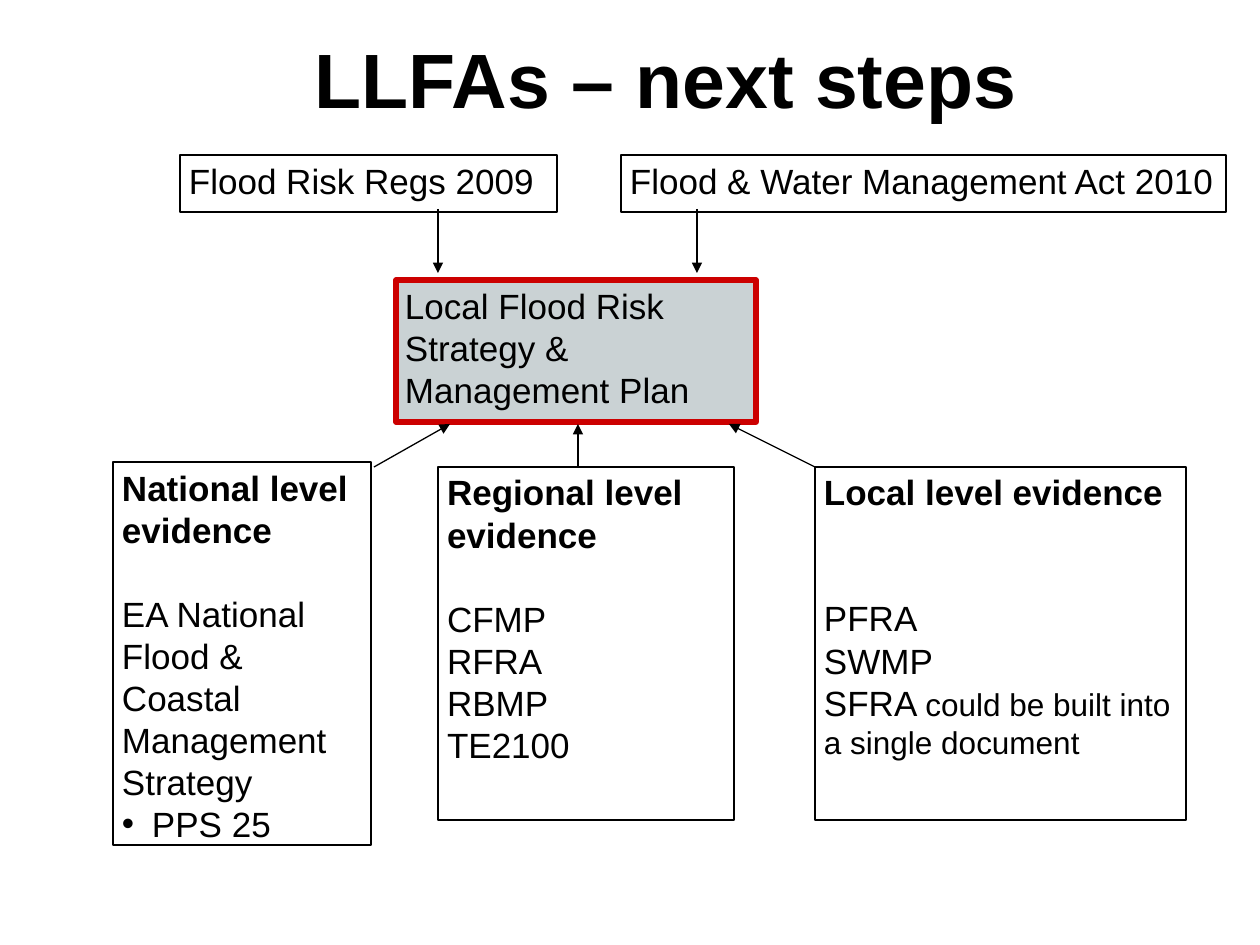
import pptx
import pptx.dml.color
import pptx.enum.shapes
import pptx.enum.text
import pptx.oxml.ns
import pptx.util
from lxml import etree

PX = 914400 / 126
BLACK = pptx.dml.color.RGBColor(0x00, 0x00, 0x00)
GREY = pptx.dml.color.RGBColor(0xCA, 0xD2, 0xD4)
RED = pptx.dml.color.RGBColor(0xCC, 0x00, 0x00)
WHITE = pptx.dml.color.RGBColor(0xFF, 0xFF, 0xFF)
qn = pptx.oxml.ns.qn


def px(length):
    return pptx.util.Emu(round(length * PX))


def add_box(page, place, paragraphs, size=20, fill=None, line=BLACK, weight=0.75, inset=(9, 4)):
    """Each paragraph is (text, bold, space before in points, bulleted)."""
    box = page.shapes.add_shape(
        pptx.enum.shapes.MSO_SHAPE.RECTANGLE, *[px(value) for value in place])
    box.shadow.inherit = False
    if fill is None:
        box.fill.background()
    else:
        box.fill.solid()
        box.fill.fore_color.rgb = fill
    if line is None:
        box.line.fill.background()
    else:
        box.line.color.rgb = line
        box.line.width = pptx.util.Pt(weight)
    frame = box.text_frame
    frame.word_wrap = True
    frame.vertical_anchor = pptx.enum.text.MSO_ANCHOR.TOP
    frame.margin_left = frame.margin_right = px(inset[0])
    frame.margin_top = frame.margin_bottom = px(inset[1])
    for index, (text, bold, gap, bulleted) in enumerate(paragraphs):
        para = frame.add_paragraph() if index else frame.paragraphs[0]
        para.text = text
        para.alignment = pptx.enum.text.PP_ALIGN.LEFT
        if gap:
            para.space_before = pptx.util.Pt(gap)
        if bulleted:
            properties = para._p.get_or_add_pPr()
            properties.set("marL", str(px(30)))
            properties.set("indent", str(px(-30)))
            etree.SubElement(properties, qn("a:buFont"), typeface="Arial")
            etree.SubElement(properties, qn("a:buChar"), char="•")
        para.font.name = "Arial"
        para.font.size = pptx.util.Pt(size)
        para.font.bold = bold
        para.font.color.rgb = BLACK
    return box


deck = pptx.Presentation()
deck.slide_width, deck.slide_height = px(1260), px(945)
page = deck.slides.add_slide(deck.slide_layouts[6])

# Title
add_box(page, (302, 26, 794, 198), [("LLFAs – next steps", True, 0, False)],
        size=44, fill=WHITE, line=None, inset=(13, 6))

# Strategy in the centre
add_box(page, (396, 280, 360, 142),
        [("Local Flood Risk Strategy & Management Plan", False, 0, False)],
        fill=GREY, line=RED, weight=3)

# Legislation above
for left, width, text in [(180, 377, "Flood Risk Regs 2009"),
                          (621, 605, "Flood & Water Management Act 2010")]:
    add_box(page, (left, 155, width, 57), [(text, False, 0, False)])

# Evidence below
add_box(page, (113, 462, 258, 383), [
    ("National level evidence", True, 0, False),
    ("EA National Flood & Coastal Management Strategy", False, 24, False),
    ("PPS 25", False, 0, True)])
add_box(page, (438, 467, 296, 353), [
    ("Regional level evidence", True, 0, False),
    ("CFMP", False, 24, False),
    ("RFRA", False, 0, False),
    ("RBMP", False, 0, False),
    ("TE2100", False, 0, False)])
local_box = add_box(page, (815, 467, 371, 353), [
    ("Local level evidence", True, 0, False),
    ("PFRA", False, 48, False),
    ("SWMP", False, 0, False),
    ("SFRA ", False, 0, False)])
span = local_box.text_frame.paragraphs[-1].add_run()
span.text = "could be built into a single document"
span.font.size = pptx.util.Pt(18)

# Arrows into the strategy
for ends in [(374, 467, 450, 424), (815, 467, 729, 424), (578, 467, 578, 424),
             (438, 209, 438, 273), (697, 209, 697, 273)]:
    arrow = page.shapes.add_connector(
        pptx.enum.shapes.MSO_CONNECTOR.STRAIGHT, *[px(value) for value in ends])
    arrow.line.color.rgb = BLACK
    arrow.line.width = pptx.util.Pt(0.75)
    etree.SubElement(arrow.line._get_or_add_ln(), qn("a:tailEnd"), type="triangle")
    etree.SubElement(arrow._element.spPr, qn("a:effectLst"))

deck.save("out.pptx")
